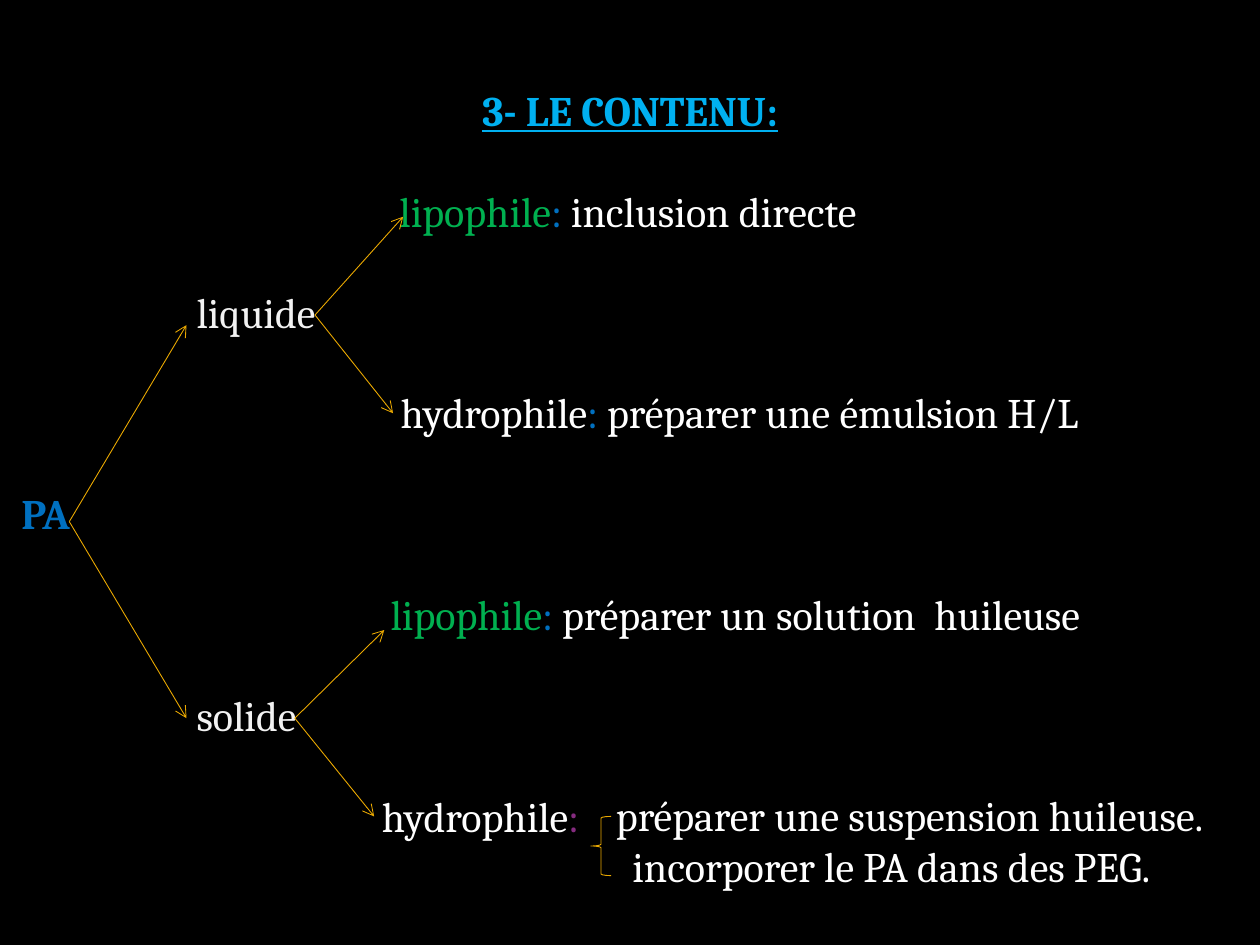
from dataclasses import dataclass

from lxml import etree
from pptx import Presentation
from pptx.dml.color import RGBColor
from pptx.enum.shapes import MSO_CONNECTOR, MSO_SHAPE
from pptx.enum.text import MSO_ANCHOR, MSO_AUTO_SIZE, PP_ALIGN
from pptx.oxml.ns import qn
from pptx.util import Inches, Pt

STRAIGHT = MSO_CONNECTOR.STRAIGHT
LEFT_BRACE = MSO_SHAPE.LEFT_BRACE
TOP = MSO_ANCHOR.TOP
NO_AUTOFIT = MSO_AUTO_SIZE.NONE
LEFT, CENTER = PP_ALIGN.LEFT, PP_ALIGN.CENTER


@dataclass(frozen=True)
class Theme:
    font: str = "Cambria"
    size: float = 24
    row_gap: float = 28.8
    line_width: float = 0.5
    background: str = "000000"
    title: str = "00B0F0"
    root: str = "0070C0"
    state: str = "F2F2F2"
    text: str = "FFFFFF"
    lipophile: str = "00B050"
    colon: str = "0070C0"
    last_colon: str = "852B7F"
    line: str = "EBA900"


@dataclass(frozen=True)
class Span:
    text: str
    color: str
    bold: bool = False


@dataclass(frozen=True)
class Row:
    indent: float
    spans: tuple[Span, ...]


@dataclass(frozen=True)
class Fork:
    start: tuple[float, float]
    ends: tuple[tuple[float, float], ...]


THEME = Theme()


def affinity(name: str, color: str, action: str) -> tuple[Span, ...]:
    return (Span(name, color), Span(": ", THEME.colon), Span(action, THEME.text))


ROWS = (
    Row(3.07, affinity("lipophile", THEME.lipophile, "inclusion directe")),
    Row(1.46, (Span("liquide", THEME.state),)),
    Row(3.08, affinity("hydrophile", THEME.text, "préparer une émulsion H/L")),
    Row(0.07, (Span("PA", THEME.root, bold=True),)),
    Row(3.0, affinity("lipophile", THEME.lipophile, "préparer un solution  huileuse")),
    Row(1.46, (Span("solide", THEME.state),)),
    Row(2.93, (Span("hydrophile", THEME.text), Span(":", THEME.last_colon))),
)

ACTIONS = (
    Row(0, (Span("préparer une suspension huileuse.", THEME.text),)),
    Row(0.13, (Span("incorporer le PA dans des PEG.", THEME.text),)),
)

FORKS = (
    Fork((0.55, 4.14), ((1.48, 2.58), (1.48, 5.7))),
    Fork((2.5, 2.5), ((3.2, 1.72), (3.12, 3.28))),
    Fork((2.34, 5.7), ((3.05, 5), (2.97, 6.48))),
)


def place(box, left: float, top: float, width: float, height: float) -> None:
    box.left, box.top = Inches(left), Inches(top)
    box.width, box.height = Inches(width), Inches(height)
    frame = box.text_frame
    frame.word_wrap = True
    frame.auto_size = NO_AUTOFIT
    frame.vertical_anchor = TOP


def add_text(para, text: str, *, color: str, bold: bool = False,
             underline: bool = False) -> None:
    span = para.add_run()
    span.text = text
    font = span.font
    font.name, font.size = THEME.font, Pt(THEME.size)
    font.bold, font.underline = bold, underline
    font.color.rgb = RGBColor.from_string(color)


def write_rows(frame, rows: tuple[Row, ...], gap: float) -> None:
    """Write one unbulleted, indented paragraph per row."""
    for number, row in enumerate(rows):
        para = frame.add_paragraph() if number else frame.paragraphs[0]
        para.alignment = LEFT
        para.space_before, para.space_after = Pt(0), Pt(gap)
        properties = para._p.get_or_add_pPr()
        properties.set("marL", str(Inches(row.indent)))
        properties.set("indent", "0")
        etree.SubElement(properties, qn("a:buNone"))
        for span in row.spans:
            add_text(para, span.text, color=span.color, bold=span.bold)


def style_line(line) -> None:
    line.color.rgb = RGBColor.from_string(THEME.line)
    line.width = Pt(THEME.line_width)


def add_arrow(page, start: tuple[float, float], end: tuple[float, float]) -> None:
    arrow = page.shapes.add_connector(STRAIGHT, *map(Inches, start + end))
    style_line(arrow.line)
    etree.SubElement(arrow.line._get_or_add_ln(), qn("a:tailEnd"), type="arrow")
    etree.SubElement(arrow._element.spPr, qn("a:effectLst"))


def main() -> None:
    deck = Presentation()
    deck.slide_width, deck.slide_height = Inches(10), Inches(7.5)
    page = deck.slides.add_slide(deck.slide_layouts[1])
    page.background.fill.solid()
    page.background.fill.fore_color.rgb = RGBColor.from_string(THEME.background)

    title, body = page.shapes.title, page.placeholders[1]
    place(title, 0, 0.62, 10, 0.5)
    heading = title.text_frame.paragraphs[0]
    heading.alignment = CENTER
    add_text(heading, "3- LE CONTENU:", color=THEME.title, bold=True, underline=True)

    place(body, 0, 1.42, 10, 5.76)
    write_rows(body.text_frame, ROWS, THEME.row_gap)

    actions = page.shapes.add_textbox(0, 0, 0, 0)
    place(actions, 4.79, 6.22, 5.2, 0.95)
    write_rows(actions.text_frame, ACTIONS, 0)

    for fork in FORKS:
        for end in fork.ends:
            add_arrow(page, fork.start, end)

    brace = page.shapes.add_shape(
        LEFT_BRACE, Inches(4.69), Inches(6.48), Inches(0.16), Inches(0.47))
    brace.shadow.inherit = False
    brace.fill.background()
    style_line(brace.line)

    deck.save("out.pptx")


if __name__ == "__main__":
    main()
